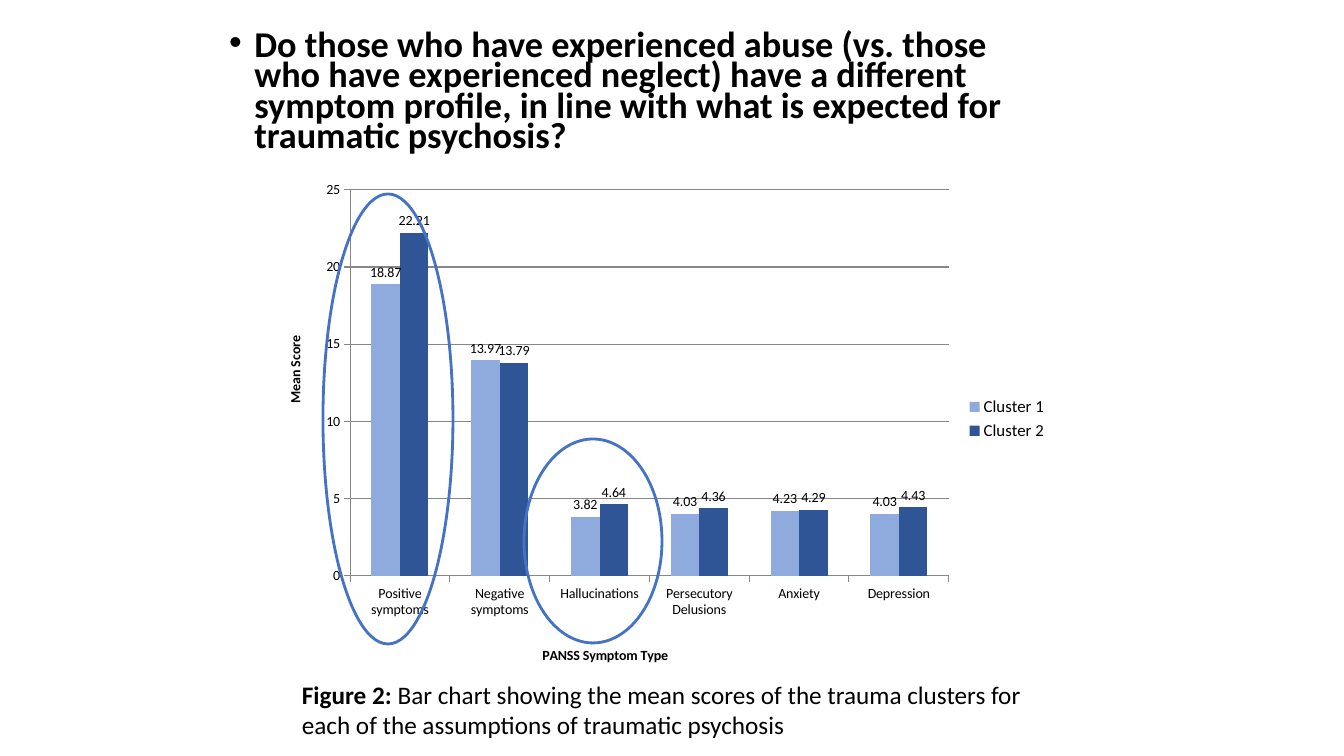
import pptx
import pptx.util
import pptx.chart.data
import pptx.dml.color
import pptx.enum.chart
import pptx.enum.shapes
import pptx.enum.text
import lxml.etree

SCALE = 914400 / 100.8
SIZE = (1344, 756)
FACE = "Calibri"
BLACK, GREY, BLUE = "000000", "878787", "4472C4"

ASK = {
    "text": "Do those who have experienced abuse (vs. those who have experienced neglect) "
            "have a different symptom profile, in line with what is expected for "
            "traumatic psychosis?",
    "box": (219, 28, 840, 144),
}
CHART = {
    "box": (267, 171, 791, 497),
    "plot": (350, 190, 599, 387),
    "cats": ["Positive symptoms", "Negative symptoms", "Hallucinations",
             "Persecutory Delusions", "Anxiety", "Depression"],
    "series": [
        ("Cluster 1", "8FAADC", (18.87, 13.97, 3.82, 4.03, 4.23, 4.03)),
        ("Cluster 2", "2F5597", (22.21, 13.79, 4.64, 4.36, 4.29, 4.43)),
    ],
    "titles": [("PANSS Symptom Type", (540, 645)), ("Mean Score", (284, 334))],
}
CAPTION = {
    "runs": [("Figure 2: ", True),
             ("Bar chart showing the mean scores of the trauma clusters for each of "
              "the assumptions of traumatic psychosis", False)],
    "box": (292, 674, 766, 72),
}
RINGS = [(323, 194, 130, 450), (524, 439, 138, 204)]


def px(num):
    return pptx.util.Emu(round(num * SCALE))


def place(box):
    return [px(num) for num in box]


def tint(code):
    return pptx.dml.color.RGBColor.from_string(code)


def assign(item, form):
    for key, value in form.items():
        setattr(item, key, value)


def style(font, size, bold=False):
    assign(font, {"name": FACE, "size": pptx.util.Pt(size), "bold": bold})
    font.color.rgb = tint(BLACK)


def add_ask(slide):
    slide.shapes.title.element.getparent().remove(slide.shapes.title.element)
    body = slide.placeholders[1]
    assign(body, dict(zip(("left", "top", "width", "height"), place(ASK["box"]))))
    frame = body.text_frame
    assign(frame, {"word_wrap": True, "auto_size": pptx.enum.text.MSO_AUTO_SIZE.NONE})
    para = frame.paragraphs[0]
    assign(para, {"text": ASK["text"], "line_spacing": 0.7,
                  "space_before": pptx.util.Pt(10)})
    style(para.runs[0].font, 25.9, True)
    props = para._p.get_or_add_pPr()
    indent = pptx.util.Inches(0.25)
    props.set("marL", str(indent))
    props.set("indent", str(-indent))


def pin(node, index, spot, rules):
    left, top, wide, high = CHART["box"]
    x, y, *size = spot
    parts = [(x - left) / wide, (y - top) / high]
    parts += [num / full for num, full in zip(size, (wide, high))]
    ns = "{http://schemas.openxmlformats.org/drawingml/2006/chart}"
    for old in node.findall(ns + "layout"):
        node.remove(old)
    layout = lxml.etree.Element(ns + "layout")
    manual = lxml.etree.SubElement(layout, ns + "manualLayout")
    values = {**rules, "xMode": "edge", "yMode": "edge"}
    values.update({key: f"{part:.3f}" for key, part in zip("xywh", parts)})
    for key, value in values.items():
        lxml.etree.SubElement(manual, ns + key).set("val", value)
    node.insert(index, layout)


def add_chart(slide):
    kinds = pptx.enum.chart
    data = pptx.chart.data.CategoryChartData()
    data.categories = CHART["cats"]
    for name, code, values in CHART["series"]:
        data.add_series(name, values)
    chart = slide.shapes.add_chart(
        kinds.XL_CHART_TYPE.COLUMN_CLUSTERED, *place(CHART["box"]), data).chart
    style(chart.font, 10)
    assign(chart, {"has_title": False, "has_legend": True})
    assign(chart.legend, {"position": kinds.XL_LEGEND_POSITION.RIGHT,
                          "include_in_layout": False})
    style(chart.legend.font, 12)
    plot = chart.plots[0]
    assign(plot, {"gap_width": 150, "overlap": 0, "vary_by_categories": False})
    for series, (name, code, values) in zip(plot.series, CHART["series"]):
        series.format.fill.solid()
        series.format.fill.fore_color.rgb = tint(code)
        labels = series.data_labels
        assign(labels, {"show_value": True,
                        "position": kinds.XL_LABEL_POSITION.OUTSIDE_END})
        style(labels.font, 10)
    axes = (chart.category_axis, chart.value_axis)
    for axis, (title, spot) in zip(axes, CHART["titles"]):
        axis.major_tick_mark = kinds.XL_TICK_MARK.OUTSIDE
        axis.format.line.color.rgb = tint(GREY)
        style(axis.tick_labels.font, 10)
        frame = axis.axis_title.text_frame
        frame.text = title
        style(frame.paragraphs[0].runs[0].font, 10, True)
        pin(axis.axis_title._element, 1, spot, {})
    assign(chart.value_axis, {"minimum_scale": 0, "maximum_scale": 25, "major_unit": 5,
                              "has_major_gridlines": True})
    chart.value_axis.major_gridlines.format.line.color.rgb = tint(GREY)
    pin(chart._chartSpace.chart.plotArea, 0, CHART["plot"], {"layoutTarget": "inner"})


def add_caption(slide):
    frame = slide.shapes.add_textbox(*place(CAPTION["box"])).text_frame
    assign(frame, {"word_wrap": True,
                   "auto_size": pptx.enum.text.MSO_AUTO_SIZE.SHAPE_TO_FIT_TEXT})
    for text, bold in CAPTION["runs"]:
        run = frame.paragraphs[0].add_run()
        run.text = text
        style(run.font, 18, bold)


def add_rings(slide):
    for box in RINGS:
        ring = slide.shapes.add_shape(pptx.enum.shapes.MSO_SHAPE.OVAL, *place(box))
        ring.shadow.inherit = False
        ring.fill.background()
        ring.line.color.rgb = tint(BLUE)
        ring.line.width = pptx.util.Pt(2)


def main():
    deck = pptx.Presentation()
    assign(deck, dict(zip(("slide_width", "slide_height"), place(SIZE))))
    slide = deck.slides.add_slide(deck.slide_layouts[1])
    for add in (add_ask, add_chart, add_caption, add_rings):
        add(slide)
    deck.save("out.pptx")


if __name__ == "__main__":
    main()
